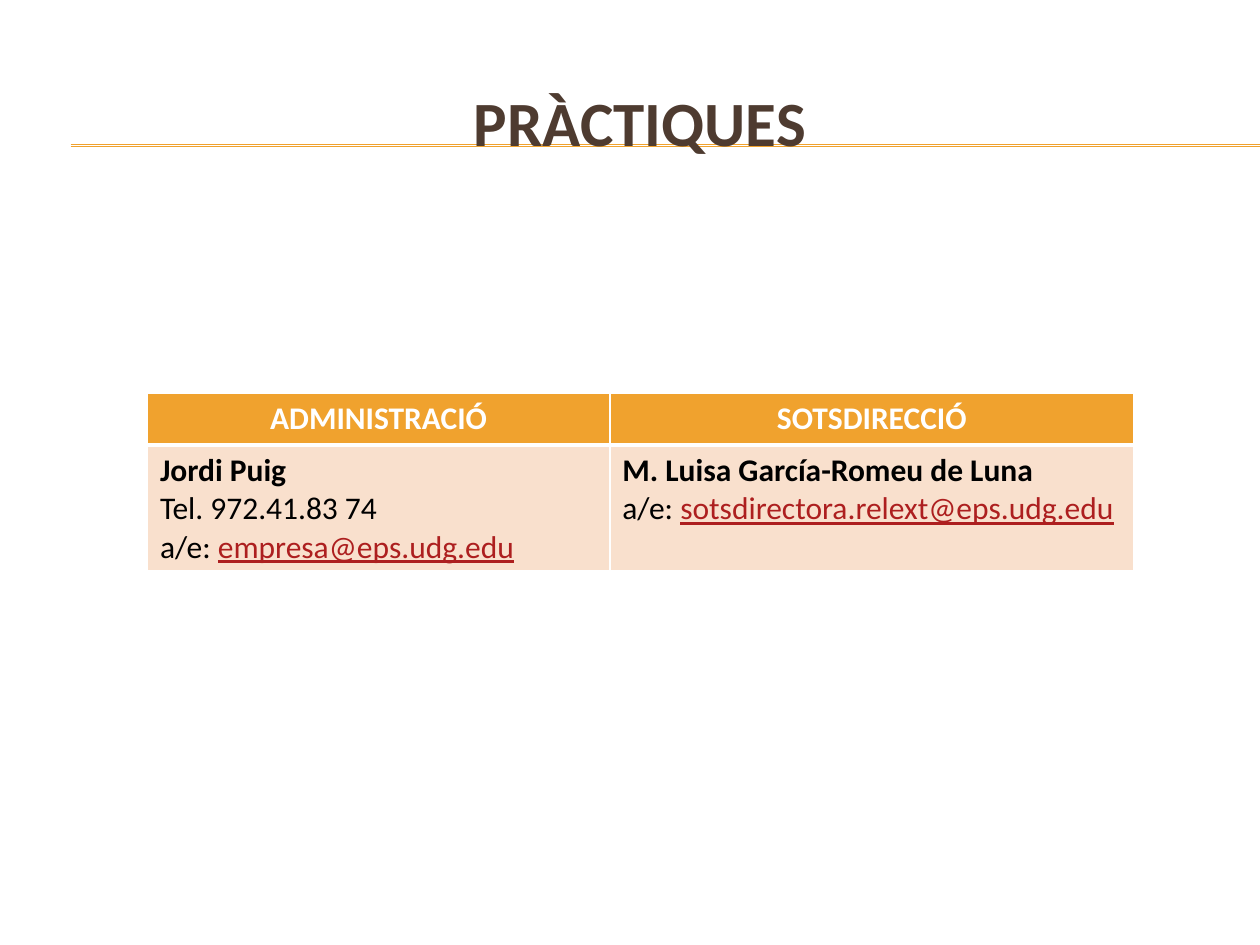
"""Build the contact slide for work placements."""
from dataclasses import dataclass

import pptx
import pptx.dml.color
import pptx.enum.shapes
import pptx.enum.text
import pptx.oxml
import pptx.oxml.ns
import pptx.util

WIDTH = pptx.util.Inches(10)
HEIGHT = pptx.util.Inches(7.5)


@dataclass(frozen=True)
class Theme:
    font: str = "Calibri"
    title_size: float = 36
    body_size: float = 18
    rule_width: float = 0.75
    border_width: float = 1
    divider_width: float = 3
    title: str = "4E3B30"
    accent: str = "F0A22E"
    panel: str = "F9E0CD"
    text: str = "000000"
    light: str = "FFFFFF"
    address: str = "AD1F1F"


@dataclass(frozen=True)
class Contact:
    office: str
    name: str
    email: str
    column_share: float
    phone: str = ""


THEME = Theme()
CONTACTS = (
    Contact("ADMINISTRACIÓ", "Jordi Puig", "empresa@eps.udg.edu", 0.367, "Tel. 972.41.83 74"),
    Contact("SOTSDIRECCIÓ", "M. Luisa García-Romeu de Luna", "sotsdirectora.relext@eps.udg.edu", 0.416),
)
ROW_SHARES = (0.055, 0.133)
RULE_SHARES = (0.153, 0.155)


def across(share: float) -> int:
    return round(WIDTH * share)


def down(share: float) -> int:
    return round(HEIGHT * share)


def rgb(value: str) -> pptx.dml.color.RGBColor:
    return pptx.dml.color.RGBColor.from_string(value)


def add_run(paragraph, text: str, color: str, size: float = THEME.body_size,
            bold: bool = False, underline: bool = False) -> None:
    run = paragraph.add_run()
    run.text = text
    run.font.name = THEME.font
    run.font.size = pptx.util.Pt(size)
    run.font.bold = bold
    run.font.underline = underline
    run.font.color.rgb = rgb(color)


def add_rule(slide, top: float) -> None:
    rule = slide.shapes.add_connector(
        pptx.enum.shapes.MSO_CONNECTOR.STRAIGHT, across(0.056), down(top), WIDTH, down(top))
    rule.line.color.rgb = rgb(THEME.accent)
    rule.line.width = pptx.util.Pt(THEME.rule_width)
    properties = rule._element.spPr
    properties.append(properties.makeelement(pptx.oxml.ns.qn("a:effectLst"), {}))


def add_title(slide, text: str) -> None:
    title = slide.shapes.add_textbox(across(0.033), down(0.067), across(0.95), down(0.123))
    frame = title.text_frame
    frame.word_wrap = True
    frame.vertical_anchor = pptx.enum.text.MSO_ANCHOR.MIDDLE
    paragraph = frame.paragraphs[0]
    paragraph.alignment = pptx.enum.text.PP_ALIGN.CENTER
    add_run(paragraph, text, THEME.title, THEME.title_size, bold=True)


def style_cell(cell, fill: str, top: float, bottom: float) -> None:
    cell.fill.solid()
    cell.fill.fore_color.rgb = rgb(fill)
    side = THEME.border_width
    borders = (("lnL", side), ("lnR", side), ("lnT", top), ("lnB", bottom))
    properties = cell._tc.get_or_add_tcPr()
    for position, (tag, width) in enumerate(borders):
        properties.insert(position, pptx.oxml.parse_xml(
            f'<a:{tag} {pptx.oxml.ns.nsdecls("a")} w="{pptx.util.Pt(width)}"><a:solidFill>'
            f'<a:srgbClr val="{THEME.light}"/></a:solidFill></a:{tag}>'))


def fill_contact(table, column: int, contact: Contact) -> None:
    header, body = table.cell(0, column), table.cell(1, column)
    style_cell(header, THEME.accent, THEME.border_width, THEME.divider_width)
    style_cell(body, THEME.panel, THEME.divider_width, THEME.border_width)
    heading = header.text_frame.paragraphs[0]
    heading.alignment = pptx.enum.text.PP_ALIGN.CENTER
    add_run(heading, contact.office, THEME.light, bold=True)
    frame = body.text_frame
    add_run(frame.paragraphs[0], contact.name, THEME.text, bold=True)
    if contact.phone:
        add_run(frame.add_paragraph(), contact.phone, THEME.text)
    email = frame.add_paragraph()
    add_run(email, "a/e: ", THEME.text)
    add_run(email, contact.email, THEME.address, underline=True)


def add_contacts(slide, contacts: tuple[Contact, ...]) -> None:
    width = across(sum(contact.column_share for contact in contacts))
    table = slide.shapes.add_table(
        len(ROW_SHARES), len(contacts), across(0.117), down(0.416), width, down(sum(ROW_SHARES))).table
    for row, share in zip(table.rows, ROW_SHARES):
        row.height = down(share)
    for column, contact in enumerate(contacts):
        table.columns[column].width = across(contact.column_share)
        fill_contact(table, column, contact)


def main() -> None:
    presentation = pptx.Presentation()
    presentation.slide_width, presentation.slide_height = WIDTH, HEIGHT
    slide = presentation.slides.add_slide(presentation.slide_layouts[6])
    for top in RULE_SHARES:
        add_rule(slide, top)
    add_title(slide, "PRÀCTIQUES")
    add_contacts(slide, CONTACTS)
    presentation.save("out.pptx")


if __name__ == "__main__":
    main()
